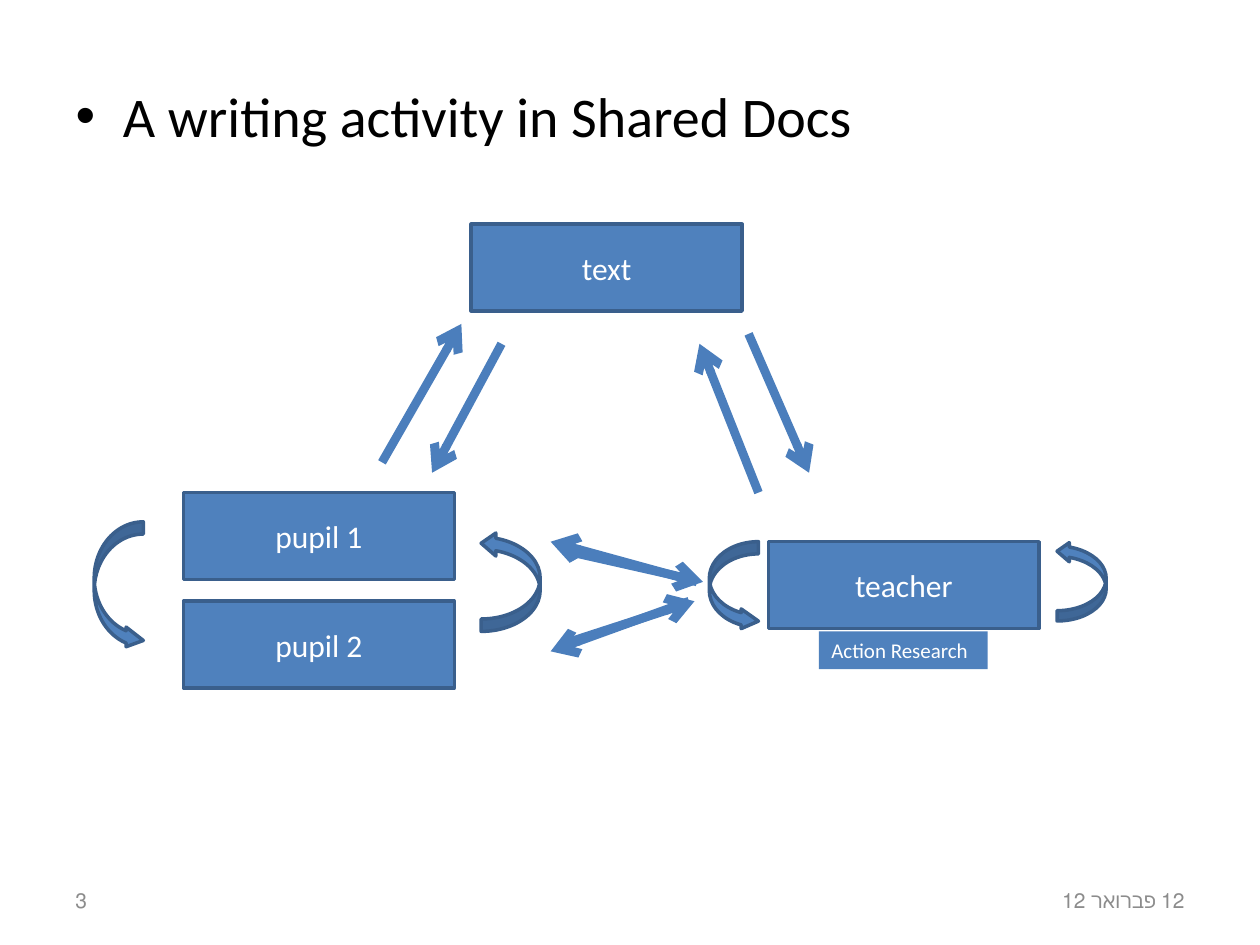
import pptx
import pptx.util
import pptx.dml.color
import pptx.enum.shapes
import pptx.enum.text
import pptx.oxml
import pptx.oxml.ns
from dataclasses import dataclass

Cm = pptx.util.Cm
Pt = pptx.util.Pt
MSO_SHAPE = pptx.enum.shapes.MSO_SHAPE
PP_ALIGN = pptx.enum.text.PP_ALIGN
MSO_ANCHOR = pptx.enum.text.MSO_ANCHOR


@dataclass(frozen=True)
class Theme:
    font: str = "Calibri"
    fill: str = "4F81BD"
    outline: str = "3A5F8C"
    arrow: str = "4B7EBC"
    heading: str = "000000"
    on_fill: str = "FFFFFF"
    footer: str = "8C8C8C"
    heading_size: int = 32
    box_size: int = 18
    small_size: int = 12
    outline_width: int = 2
    arrow_width: int = 5


THEME = Theme()
BOX_WIDTH, BOX_HEIGHT = 5.46, 1.75


def rgb(value):
    return pptx.dml.color.RGBColor.from_string(value)


def write(shape, words, size, color, align=PP_ALIGN.LEFT, rtl=False):
    shape.text_frame.text = words
    paragraph = shape.text_frame.paragraphs[0]
    paragraph.alignment = align
    if rtl:
        paragraph._p.get_or_add_pPr().set("rtl", "1")
    font = paragraph.runs[0].font
    font.name = THEME.font
    font.size = Pt(size)
    font.color.rgb = rgb(color)


def add_heading(slide, words):
    heading = slide.placeholders[1]
    heading.left, heading.top = Cm(1.27), Cm(1.52)
    heading.width, heading.height = Cm(22.86), Cm(15.49)
    write(heading, words, THEME.heading_size, THEME.heading)


def add_footer(slide, words, left, align):
    footer = slide.shapes.add_textbox(Cm(left), Cm(17.65), Cm(5.93), Cm(1.01))
    footer.text_frame.word_wrap = True
    footer.text_frame.vertical_anchor = MSO_ANCHOR.MIDDLE
    write(footer, words, THEME.small_size, THEME.footer, align, rtl=True)


def add_filled(slide, kind, left, top, width, height, outlined=True):
    shape = slide.shapes.add_shape(kind, Cm(left), Cm(top), Cm(width), Cm(height))
    shape.shadow.inherit = False
    shape.fill.solid()
    shape.fill.fore_color.rgb = rgb(THEME.fill)
    if outlined:
        shape.line.color.rgb = rgb(THEME.outline)
        shape.line.width = Pt(THEME.outline_width)
    else:
        shape.line.fill.background()
    return shape


def add_box(slide, words, left, top):
    box = add_filled(slide, MSO_SHAPE.FLOWCHART_PROCESS, left, top, BOX_WIDTH, BOX_HEIGHT)
    box.text_frame.vertical_anchor = MSO_ANCHOR.MIDDLE
    write(box, words, THEME.box_size, THEME.on_fill, PP_ALIGN.CENTER, rtl=True)


def add_label(slide, words, left, top, width, height):
    label = add_filled(slide, MSO_SHAPE.RECTANGLE, left, top, width, height, outlined=False)
    label.text_frame.word_wrap = False
    label.text_frame.vertical_anchor = MSO_ANCHOR.TOP
    write(label, words, THEME.small_size, THEME.on_fill)


def add_arrow(slide, start, end):
    arrow = slide.shapes.add_connector(
        pptx.enum.shapes.MSO_CONNECTOR.STRAIGHT, *map(Cm, start + end))
    arrow.line.color.rgb = rgb(THEME.arrow)
    arrow.line.width = Pt(THEME.arrow_width)
    head = pptx.oxml.parse_xml(
        '<a:tailEnd %s type="arrow"/>' % pptx.oxml.ns.nsdecls("a"))
    arrow.line._get_or_add_ln().append(head)
    arrow._element.spPr.append(
        pptx.oxml.parse_xml("<a:effectLst %s/>" % pptx.oxml.ns.nsdecls("a")))


def add_loop(slide, left, top, width, height, downward):
    kind = MSO_SHAPE.CURVED_RIGHT_ARROW if downward else MSO_SHAPE.CURVED_LEFT_ARROW
    loop = add_filled(slide, kind, left, top, width, height)
    proportions = (0.25, 0.4, 0.35) if downward else (0.21, 0.39, 0.25)
    for index, proportion in enumerate(proportions):
        loop.adjustments[index] = proportion
    if not downward:
        loop._element.spPr.find(pptx.oxml.ns.qn("a:xfrm")).set("flipV", "1")


def main():
    deck = pptx.Presentation()
    deck.slide_width, deck.slide_height = Cm(25.4), Cm(19.05)
    slide = deck.slides.add_slide(deck.slide_layouts[1])
    empty_title = slide.shapes.title._element
    empty_title.getparent().remove(empty_title)

    add_footer(slide, "12 פברואר 12", 18.2, PP_ALIGN.RIGHT)
    add_footer(slide, "3", 1.27, PP_ALIGN.LEFT)
    add_heading(slide, "A writing activity in Shared Docs")

    for words, left, top in (
        ("pupil 1", 3.7, 9.93),
        ("text", 9.5, 4.52),
        ("pupil 2", 3.7, 12.12),
        ("teacher", 15.49, 10.92),
    ):
        add_box(slide, words, left, top)

    for start, end in (
        ((7.7, 9.32), (9.3, 6.53)),
        ((10.11, 6.93), (8.71, 9.53)),
        ((15.09, 6.73), (16.31, 9.53)),
        ((15.29, 9.93), (14.1, 6.93)),
        ((11.51, 11.13), (14.17, 11.73)),
        ((14.05, 11.73), (11.1, 10.92)),
        ((11.51, 12.93), (14, 12.12)),
        ((13.89, 12.12), (11.1, 13.13)),
    ):
        add_arrow(slide, start, end)

    for left, top, width, height, downward in (
        (1.9, 10.52, 0.99, 2.59, True),
        (9.7, 10.72, 1.19, 2.01, False),
        (14.3, 10.92, 0.99, 1.8, True),
        (21.31, 10.92, 0.99, 1.6, False),
    ):
        add_loop(slide, left, top, width, height, downward)

    add_label(slide, "Action Research", 16.51, 12.73, 3.4, 0.76)
    deck.save("out.pptx")


if __name__ == "__main__":
    main()
